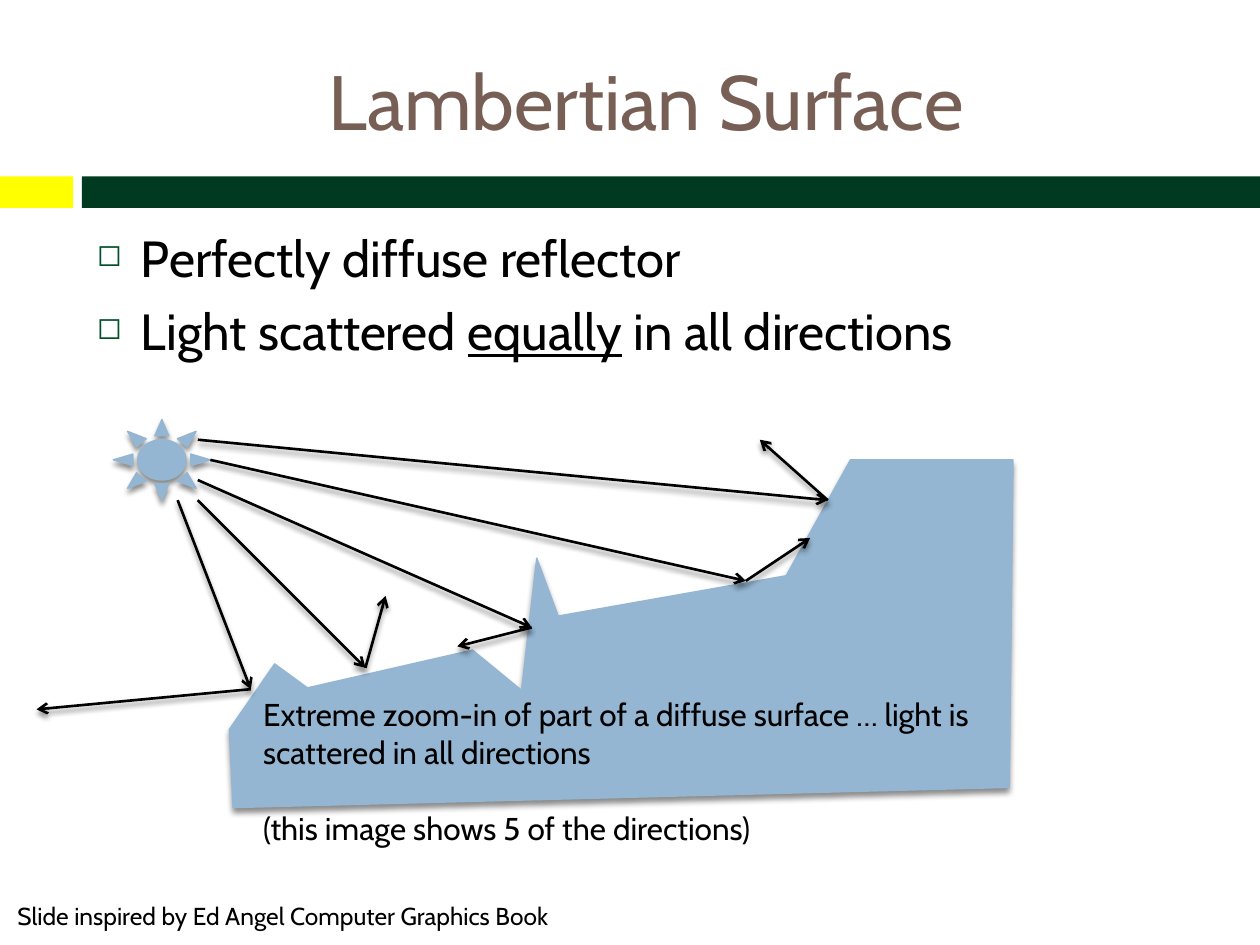
from lxml.etree import SubElement
from pptx import Presentation
from pptx.dml.color import RGBColor
from pptx.enum.shapes import MSO_CONNECTOR as Connector, MSO_SHAPE as Shape
from pptx.enum.text import MSO_ANCHOR as Anchor, MSO_AUTO_SIZE as AutoSize, PP_ALIGN as Align
from pptx.oxml.ns import qn
from pptx.util import Inches, Pt

COLUMNS, ROWS = 100, 75
COLORS = {
    "title": "775F55",
    "text": "000000",
    "bullet": "005128",
    "accent": "FFFF00",
    "band": "003A20",
    "surface": "94B6D2",
    "ray": "000000",
    "shadow": "000000",
}

SURFACE = [
    (18.2, 57.9), (21.8, 52.7), (24.4, 54.6), (37.5, 51.6), (41.4, 54.8), (42.6, 44.3),
    (44.3, 48.9), (62.4, 45.7), (67.5, 36.5), (80.4, 36.5), (80.1, 62.5), (18.5, 64.1),
]
# Each light path: leaves the sun, hits the surface, scatters away.
LIGHT_PATHS = [
    ((14.1, 39.7), (19.9, 54.7), (2.9, 56.3)),
    ((15.7, 39.7), (29, 53), (30.6, 47.3)),
    ((15.7, 38.1), (42.2, 49.8), (36.3, 51.3)),
    ((16.7, 36.5), (59.2, 46.1), (64.3, 42.7)),
    ((15.7, 34.9), (65.7, 39.7), (60.3, 34.9)),
]


def color(name):
    return RGBColor.from_string(COLORS[name])


class SlideBuilder:
    """Draws on one slide; lengths are columns and rows of the grid."""

    font_name = "Cabin"

    def __init__(self, deck):
        self.page = deck.slides.add_slide(deck.slide_layouts[5])
        self.column = deck.slide_width / COLUMNS
        self.row = deck.slide_height / ROWS

    def place(self, *lengths):
        """Turn alternating columns and rows into slide units."""
        units = (self.column, self.row)
        return [round(length * units[i % 2]) for i, length in enumerate(lengths)]

    def style_font(self, para, size, name="text"):
        para.font.name = self.font_name
        para.font.size = Pt(size)
        para.font.color.rgb = color(name)

    def add_shadow(self, shape):
        effects = SubElement(shape.element.spPr, qn("a:effectLst"))
        outer = SubElement(effects, qn("a:outerShdw"), blurRad=str(Pt(3)), dist=str(Pt(2.4)),
                           dir="5400000", rotWithShape="0")
        tint = SubElement(outer, qn("a:srgbClr"), val=COLORS["shadow"])
        SubElement(tint, qn("a:alpha"), val="45000")

    def paint(self, shape, name):
        """Fill and outline in one colour, with a soft shadow."""
        shape.fill.solid()
        shape.fill.fore_color.rgb = color(name)
        shape.line.color.rgb = color(name)
        shape.line.width = Pt(0.79)
        self.add_shadow(shape)

    def bar(self, area, name):
        shape = self.page.shapes.add_shape(Shape.RECTANGLE, *self.place(*area))
        shape.shadow.inherit = False
        shape.fill.solid()
        shape.fill.fore_color.rgb = color(name)
        shape.line.fill.background()

    def title(self, area, text):
        holder = self.page.shapes.title
        holder.left, holder.top, holder.width, holder.height = self.place(*area)
        frame = holder.text_frame
        frame.text = text
        frame.vertical_anchor = Anchor.MIDDLE
        para = frame.paragraphs[0]
        para.alignment = Align.CENTER
        self.style_font(para, 44, "title")

    def text(self, area, lines, size, gap=0, wrap=True, bullet=None):
        """Each line is a list of (words, underlined) spans."""
        box = self.page.shapes.add_textbox(*self.place(*area))
        frame = box.text_frame
        frame.word_wrap = wrap
        frame.auto_size = AutoSize.NONE if bullet else AutoSize.SHAPE_TO_FIT_TEXT
        for index, spans in enumerate(lines):
            para = frame.add_paragraph() if index else frame.paragraphs[0]
            if index and gap:
                para.space_before = Pt(gap)
            if bullet:
                self.add_bullet(para, bullet)
            self.style_font(para, size)
            for words, underlined in spans:
                span = para.add_run()
                span.text = words
                if underlined:
                    span.font.underline = True

    def add_bullet(self, para, symbol):
        props = para._p.get_or_add_pPr()
        props.set("marL", str(Inches(0.35)))
        props.set("indent", str(-Inches(0.35)))
        tint = SubElement(props, qn("a:buClr"))
        SubElement(tint, qn("a:srgbClr"), val=COLORS["bullet"])
        SubElement(props, qn("a:buSzPct"), val="60000")
        SubElement(props, qn("a:buChar"), char=symbol)

    def outline(self, points, name):
        start, *others = [self.place(*point) for point in points]
        builder = self.page.shapes.build_freeform(*start)
        builder.add_line_segments(others, close=True)
        self.paint(builder.convert_to_shape(), name)

    def sun(self, area, name):
        self.paint(self.page.shapes.add_shape(Shape.SUN, *self.place(*area)), name)

    def arrow(self, start, end):
        line = self.page.shapes.add_connector(Connector.STRAIGHT, *self.place(*start, *end))
        line.line.color.rgb = color("ray")
        line.line.width = Pt(1.5)
        SubElement(line.line._get_or_add_ln(), qn("a:tailEnd"), type="arrow")
        self.add_shadow(line)


def main():
    deck = Presentation()
    deck.slide_width, deck.slide_height = Inches(10), Inches(7.5)
    slide = SlideBuilder(deck)

    slide.bar((0, 14, 5.8, 2.5), "accent")
    slide.bar((6.5, 14, 93.5, 2.5), "band")
    slide.title((6.7, 2.5, 89.2, 10.8), "Lambertian Surface")
    slide.text((6.7, 17.5, 89.2, 49.2), [
        [("Perfectly diffuse reflector", False)],
        [("Light scattered ", False), ("equally", True), (" in all directions", False)],
    ], size=29, gap=7, bullet="◻")

    slide.outline(SURFACE, "surface")
    slide.text((0.4, 71, 47.6, 3.4),
               [[("Slide inspired by Ed Angel Computer Graphics Book", False)]],
               size=14, wrap=False)
    slide.sun((9, 33.3, 7.7, 6.4), "surface")
    for source, hit, scattered in LIGHT_PATHS:
        slide.arrow(source, hit)
        slide.arrow(hit, scattered)
    slide.text((19.9, 54.7, 60.4, 13.1), [
        [("Extreme zoom-in of part of a diffuse surface … light is scattered in all directions",
          False)],
        [("(this image shows 5 of the directions)", False)],
    ], size=18, gap=21.5)

    deck.save("out.pptx")


if __name__ == "__main__":
    main()
